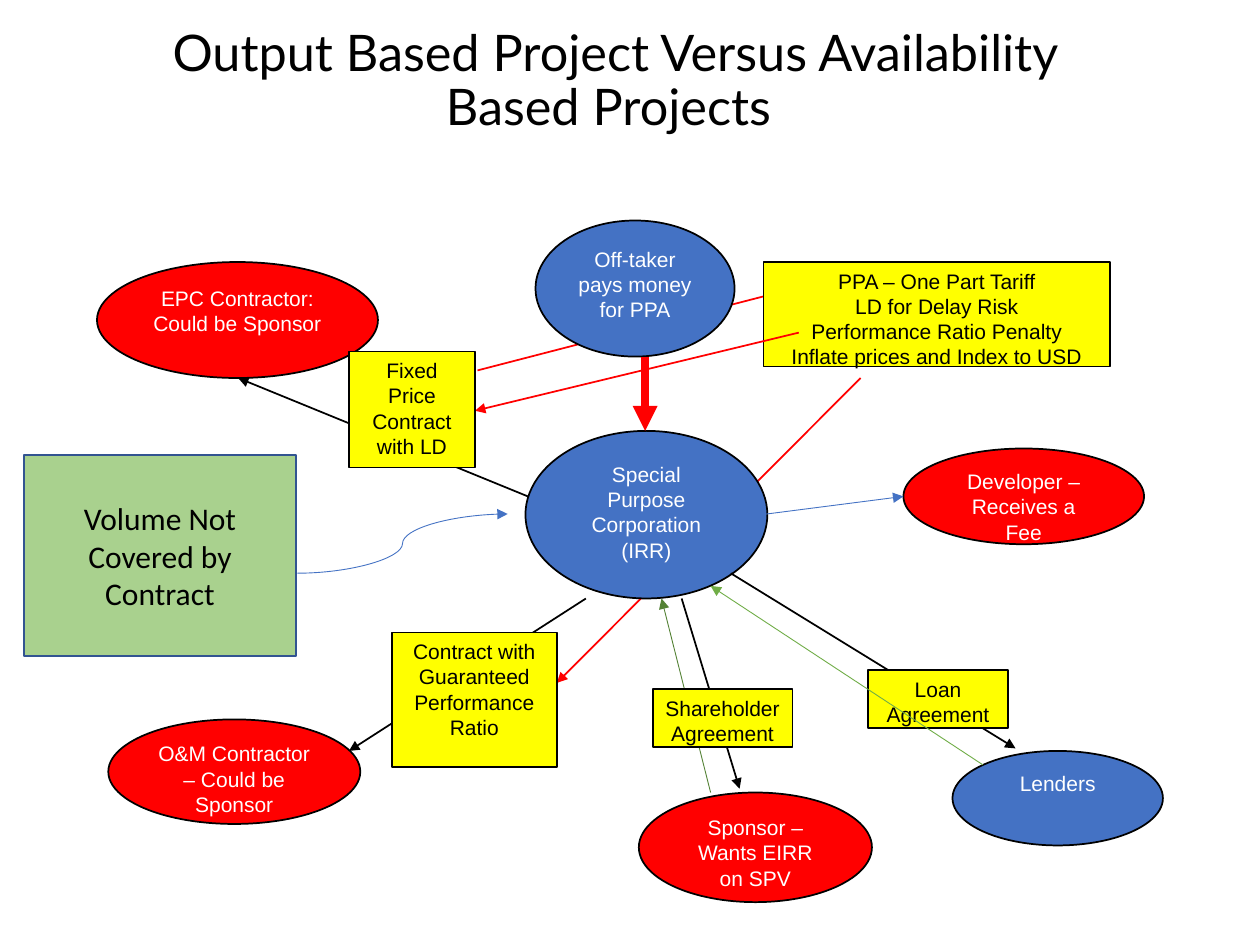
import pptx
import pptx.util
import pptx.dml.color
import pptx.enum.shapes
import pptx.enum.text
import pptx.oxml.ns
import lxml.etree

Inches, Pt = pptx.util.Inches, pptx.util.Pt
RGBColor = pptx.dml.color.RGBColor
SHAPE = pptx.enum.shapes.MSO_SHAPE
CONNECTOR = pptx.enum.shapes.MSO_CONNECTOR
ANCHOR = pptx.enum.text.MSO_ANCHOR
CENTER = pptx.enum.text.PP_ALIGN.CENTER
qn = pptx.oxml.ns.qn

BLACK = RGBColor(0x00, 0x00, 0x00)
WHITE = RGBColor(0xFF, 0xFF, 0xFF)
RED = RGBColor(0xFF, 0x00, 0x00)
BLUE = RGBColor(0x44, 0x72, 0xC4)
YELLOW = RGBColor(0xFF, 0xFF, 0x00)
GREEN = RGBColor(0x70, 0xAD, 0x47)
DARK_GREEN = RGBColor(0x54, 0x82, 0x35)
PALE_GREEN = RGBColor(0xA9, 0xD1, 0x8E)
NAVY = RGBColor(0x32, 0x54, 0x91)

TITLE_FONT = {"name": "Lato", "size": Pt(28.8), "bold": False}
LABEL_FONT = {"name": "Arial", "size": Pt(12)}
NOTE_FONT = {"name": "Calibri", "size": Pt(18)}

# Parties: text, fill, left, top, width, height
PARTIES = [
    ("Special Purpose Corporation (IRR)", BLUE, 4.17, 3.42, 1.92, 1.33),
    ("Off-taker pays money for PPA", BLUE, 4.25, 1.75, 1.58, 1.08),
    ("EPC Contractor: Could be Sponsor", RED, 0.77, 2.08, 2.23, 0.92),
    ("O&M Contractor – Could be Sponsor", RED, 0.86, 5.71, 2, 0.83),
    ("Lenders", BLUE, 7.56, 5.96, 1.67, 0.75),
    ("Sponsor – Wants EIRR on SPV", RED, 5.07, 6.29, 1.85, 0.87),
    ("Developer – Receives a Fee", RED, 7.17, 3.56, 1.91, 0.76),
]

PPA = ("PPA – One Part Tariff\nLD for Delay Risk\nPerformance Ratio Penalty\n"
       "Inflate prices and Index to USD", 6.06, 2.08, 2.75, 0.83)

# Contracts: text, left, top, width, height
CONTRACTS = [
    ("Loan Agreement", 6.89, 5.32, 1.11, 0.46),
    ("Shareholder Agreement", 5.18, 5.47, 1.11, 0.46),
    ("Contract with Guaranteed Performance Ratio", 3.11, 5.02, 1.31, 1.07),
    ("Fixed Price Contract with LD", 2.77, 2.79, 1, 0.92),
]

# Arrows: start, end, colour, width; the arrowhead is at the end
BACK_ARROWS = [
    ((3.79, 2.94), (6.34, 2.28), RED, 1),
    ((6.83, 3), (4.42, 5.42), RED, 1),
    ((5.64, 6.29), (5.25, 4.75), DARK_GREEN, 0.5),
]
CONTRACT_ARROWS = [
    ((4.19, 3.94), (1.89, 3), BLACK, 1),
    ((6.34, 2.64), (3.77, 3.26), RED, 1),
    ((5.8, 4.55), (8.06, 5.94), BLACK, 1),
    ((5.41, 4.75), (5.87, 6.26), BLACK, 1),
    ((4.65, 4.75), (2.77, 5.96), BLACK, 1),
    ((5.12, 2.83), (5.12, 3.42), RED, 4.75),
]
FRONT_ARROWS = [
    ((7.8, 6.07), (5.64, 4.65), GREEN, 0.5),
    ((6.08, 4.08), (7.17, 3.94), BLUE, 0.5),
]


def set_text(tf, text, font, color, anchor, spacing=1.0):
    tf.word_wrap = True
    tf.auto_size = pptx.enum.text.MSO_AUTO_SIZE.NONE
    tf.vertical_anchor = anchor
    tf.text = text
    for p in tf.paragraphs:
        p.alignment = CENTER
        p.line_spacing = spacing
        for r in p.runs:
            for name, value in font.items():
                setattr(r.font, name, value)
            r.font.color.rgb = color


def add_title(s, text):
    sp = s.shapes.title
    box = {"left": 0.69, "top": 0.27, "width": 8.38, "height": 0.76}
    for name, value in box.items():
        setattr(sp, name, Inches(value))
    set_text(sp.text_frame, text, TITLE_FONT, BLACK, ANCHOR.MIDDLE, 0.9)


def add_node(s, kind, text, box, fill, color=BLACK, line=BLACK,
             font=LABEL_FONT, anchor=ANCHOR.TOP):
    sp = s.shapes.add_shape(kind, *map(Inches, box))
    sp.shadow.inherit = False
    sp.fill.solid()
    sp.fill.fore_color.rgb = fill
    sp.line.color.rgb = line
    sp.line.width = Pt(1)
    set_text(sp.text_frame, text, font, color, anchor)


def add_arrow(s, start, end, color, width, kind=CONNECTOR.STRAIGHT):
    cxn = s.shapes.add_connector(kind, *map(Inches, start + end))
    cxn.line.color.rgb = color
    cxn.line.width = Pt(width)
    ln = cxn.line._get_or_add_ln()
    lxml.etree.SubElement(ln, qn("a:tailEnd"), type="triangle")
    lxml.etree.SubElement(cxn._element.spPr, qn("a:effectLst"))


def add_arrows(s, arrows):
    for arrow in arrows:
        add_arrow(s, *arrow)


def main():
    prs = pptx.Presentation()
    prs.slide_width, prs.slide_height = Inches(10), Inches(7.5)
    s = prs.slides.add_slide(prs.slide_layouts[5])
    add_title(s, "Output Based Project Versus Availability Based Projects ")

    # Arrows that pass behind the parties
    add_arrows(s, BACK_ARROWS)

    # Parties and the power purchase agreement
    for text, fill, *box in PARTIES:
        add_node(s, SHAPE.OVAL, text, box, fill, WHITE)
    add_node(s, SHAPE.RECTANGLE, PPA[0], PPA[1:], YELLOW)

    # Contract arrows with their labels on top
    add_arrows(s, CONTRACT_ARROWS)
    for text, *box in CONTRACTS:
        add_node(s, SHAPE.RECTANGLE, text, box, YELLOW)

    # Volume note and the arrows in front
    add_node(s, SHAPE.RECTANGLE, "Volume Not Covered by Contract",
             (0.19, 3.61, 2.16, 1.6), PALE_GREEN, line=NAVY,
             font=NOTE_FONT, anchor=ANCHOR.MIDDLE)
    add_arrows(s, FRONT_ARROWS)
    add_arrow(s, (2.36, 4.55), (4.03, 4.08), BLUE, 0.5, CONNECTOR.CURVE)

    prs.save("out.pptx")


if __name__ == "__main__":
    main()
